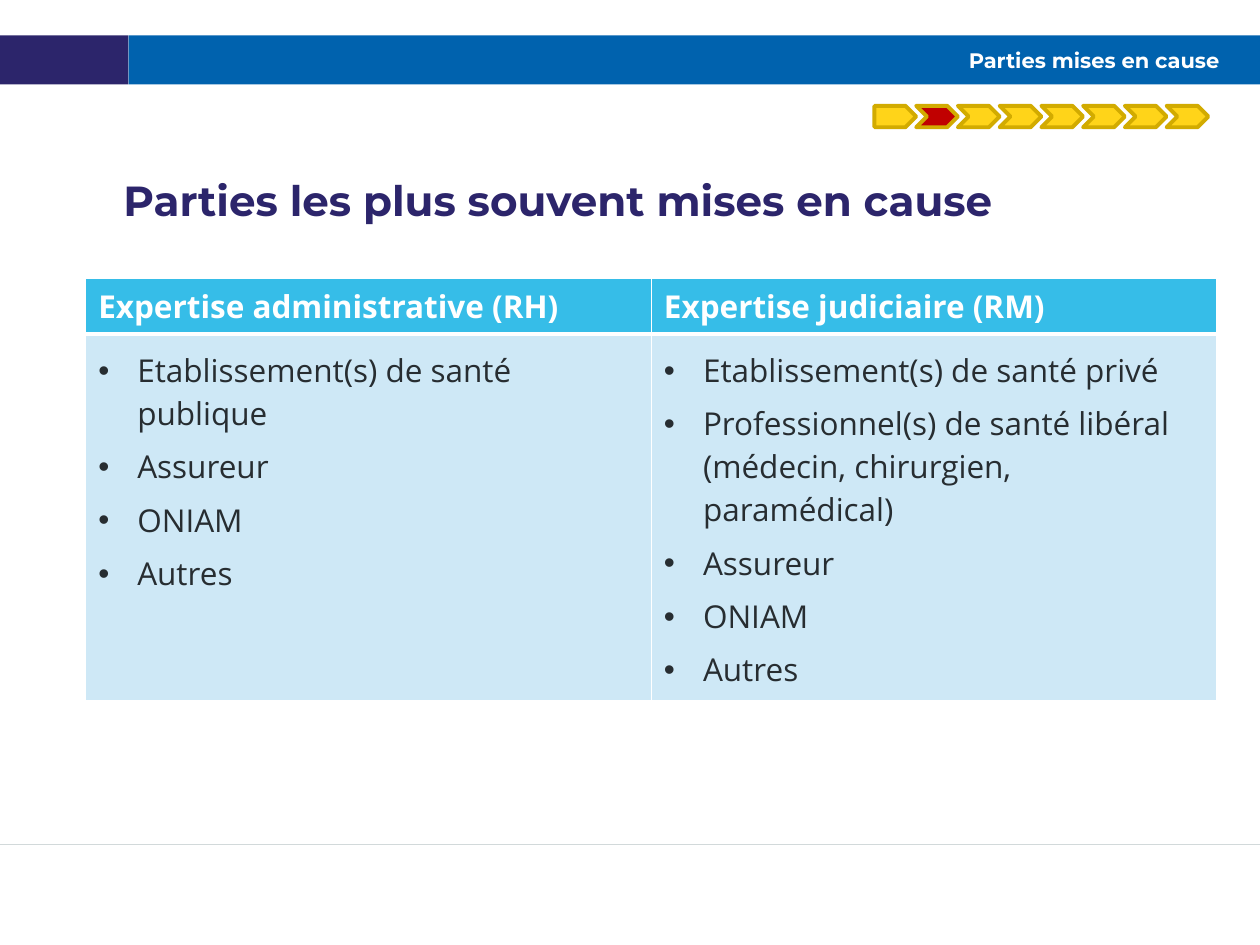
"""Build the slide on the parties most often implicated."""
import pptx
import pptx.dml.color
import pptx.enum.shapes
import pptx.enum.text
import pptx.oxml.ns
import pptx.util
from lxml import etree

Inches, Pt = pptx.util.Inches, pptx.util.Pt
RGBColor = pptx.dml.color.RGBColor
MSO_SHAPE = pptx.enum.shapes.MSO_SHAPE
PP_ALIGN = pptx.enum.text.PP_ALIGN
MSO_ANCHOR = pptx.enum.text.MSO_ANCHOR
qn = pptx.oxml.ns.qn

SECTION = "Parties mises en cause"
HEADING = "Parties les plus souvent mises en cause"
COLUMNS = [
    ("Expertise administrative (RH)",
     ["Etablissement(s) de santé publique", "Assureur", "ONIAM", "Autres"]),
    ("Expertise judiciaire (RM)",
     ["Etablissement(s) de santé privé",
      "Professionnel(s) de santé libéral (médecin, chirurgien, paramédical)",
      "Assureur", "ONIAM", "Autres"]),
]
STEPS, CURRENT_STEP = 8, 1

NAVY = RGBColor(0x2C, 0x25, 0x6B)
BLUE = RGBColor(0x00, 0x62, 0xAE)
GREY = RGBColor(0xD2, 0xD9, 0xDA)
WHITE = RGBColor(0xFF, 0xFF, 0xFF)
CYAN = RGBColor(0x36, 0xBD, 0xE8)
PALE = RGBColor(0xCE, 0xE8, 0xF6)
DARK = RGBColor(0x27, 0x2D, 0x31)
YELLOW = RGBColor(0xFF, 0xD4, 0x19)
GOLD = RGBColor(0xD2, 0xAB, 0x00)
RED = RGBColor(0xC0, 0x00, 0x00)


def style(p, font, size, color, bold):
    for r in p.runs:
        r.font.name, r.font.size = font, Pt(size)
        r.font.color.rgb, r.font.bold = color, bold


def place(sp, left, top, width, height):
    sp.left, sp.top = Inches(left), Inches(top)
    sp.width, sp.height = Inches(width), Inches(height)


def add_filled(shapes, kind, box, color):
    sp = shapes.add_shape(kind, *map(Inches, box))
    sp.shadow.inherit = False
    sp.fill.solid()
    sp.fill.fore_color.rgb = color
    sp.line.fill.background()
    return sp


def set_indent(p, margin, indent, bullet=None):
    pPr = p._p.get_or_add_pPr()
    pPr.set("marL", str(Inches(margin)))
    pPr.set("indent", str(Inches(indent)))
    if bullet:
        etree.SubElement(pPr, qn("a:buFont"), typeface="Arial")
        etree.SubElement(pPr, qn("a:buChar"), char=bullet)
    else:
        etree.SubElement(pPr, qn("a:buNone"))


def set_borders(cell, widths):
    tcPr = cell._tc.get_or_add_tcPr()
    for i, (side, width) in enumerate(widths.items()):
        ln = etree.Element(qn("a:ln" + side), w=str(Pt(width)))
        fill = etree.SubElement(ln, qn("a:solidFill"))
        etree.SubElement(fill, qn("a:srgbClr"), val=str(WHITE))
        tcPr.insert(i, ln)


def fill_cell(cell, lines, color, borders):
    cell.fill.solid()
    cell.fill.fore_color.rgb = color
    set_borders(cell, borders)
    cell.text_frame.text = "\n".join(lines)


def add_frame(slide):
    for left, width, color in [(0, 1.02, NAVY), (1.02, 8.98, BLUE)]:
        add_filled(slide.shapes, MSO_SHAPE.RECTANGLE, (left, 0.28, width, 0.39), color)
    line = slide.shapes.add_connector(
        pptx.enum.shapes.MSO_CONNECTOR.STRAIGHT,
        0, Inches(6.7), Inches(10), Inches(6.7))
    line.line.color.rgb, line.line.width = GREY, Pt(0.75)
    etree.SubElement(line._element.spPr, qn("a:effectLst"))


def add_titles(slide):
    title, body = slide.shapes.title, slide.placeholders[1]
    place(title, 1.1, 0.28, 8.58, 0.39)
    place(body, 0.68, 1.43, 8.98, 0.43)
    for sp, text, size, color, anchor in [
            (title, SECTION, 12, WHITE, MSO_ANCHOR.MIDDLE),
            (body, HEADING, 24, NAVY, MSO_ANCHOR.TOP)]:
        slide.shapes._spTree.append(sp._element)
        tf = sp.text_frame
        tf.text = text
        tf.margin_left = tf.margin_top = tf.margin_right = tf.margin_bottom = 0
        tf.vertical_anchor = anchor
        tf.auto_size = pptx.enum.text.MSO_AUTO_SIZE.NONE
        style(tf.paragraphs[0], "Montserrat", size, color, True)
    title.text_frame.paragraphs[0].alignment = PP_ALIGN.RIGHT
    p = body.text_frame.paragraphs[0]
    set_indent(p, 0.3, 0)
    p.line_spacing, p.space_before = 0.9, Pt(0)


def add_parties_table(slide):
    table = slide.shapes.add_table(
        2, len(COLUMNS), Inches(0.68), Inches(2.21), Inches(8.98), Inches(2.88)).table
    table.rows[0].height, table.rows[1].height = Inches(0.43), Inches(2.45)
    for col, (header, parties) in enumerate(COLUMNS):
        head, cell = table.cell(0, col), table.cell(1, col)
        fill_cell(head, [header], CYAN, {"L": 1, "R": 1, "T": 1, "B": 3})
        style(head.text_frame.paragraphs[0], "Open Sans", 18, WHITE, True)
        fill_cell(cell, parties, PALE, {"L": 1, "R": 1, "T": 3, "B": 1})
        cell.margin_top = Inches(0.12)
        cell.margin_bottom = Inches(0.08)
        for i, p in enumerate(cell.text_frame.paragraphs):
            set_indent(p, 0.31, -0.31, "•")
            p.space_before = Pt(6 if i else 0)
            style(p, "Open Sans", 18, DARK, False)


def add_progress(slide):
    group = slide.shapes.add_group_shape()
    step = 2.65 / STEPS
    for i in range(STEPS):
        kind = MSO_SHAPE.CHEVRON if i else MSO_SHAPE.PENTAGON
        color = RED if i == CURRENT_STEP else YELLOW
        sp = add_filled(group.shapes, kind, (6.94 + i * step, 0.84, step, 0.17), color)
        sp.line.color.rgb, sp.line.width = GOLD, Pt(2.25)
        etree.SubElement(sp.line._get_or_add_ln(), qn("a:round"))


def main():
    prs = pptx.Presentation()
    prs.slide_width, prs.slide_height = Inches(10), Inches(7.5)
    slide = prs.slides.add_slide(prs.slide_layouts[1])
    add_frame(slide)
    add_titles(slide)
    add_parties_table(slide)
    add_progress(slide)
    prs.save("out.pptx")


if __name__ == "__main__":
    main()
